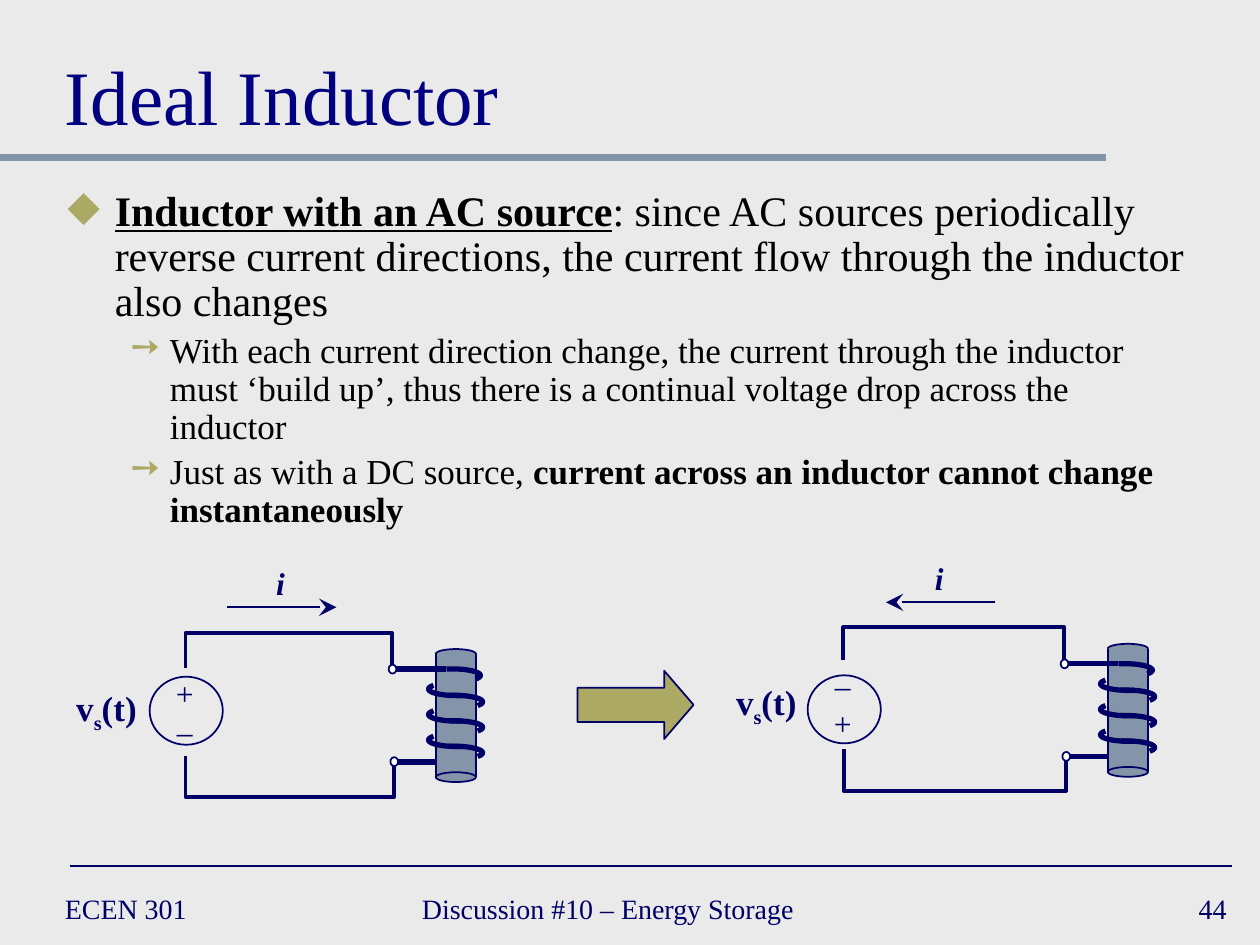
"""Build the Ideal Inductor slide with two AC circuits."""
from math import cos, radians, sin

from lxml import etree
from pptx import Presentation
from pptx.dml.color import RGBColor
from pptx.enum.shapes import MSO_CONNECTOR, MSO_SHAPE
from pptx.enum.text import MSO_ANCHOR, MSO_AUTO_SIZE, PP_ALIGN
from pptx.oxml.ns import qn
from pptx.util import Pt

STRAIGHT, ELBOW = MSO_CONNECTOR.STRAIGHT, MSO_CONNECTOR.ELBOW
OVAL, RECT, ARROW = MSO_SHAPE.OVAL, MSO_SHAPE.RECTANGLE, MSO_SHAPE.RIGHT_ARROW
TOP, MIDDLE, BOTTOM = MSO_ANCHOR.TOP, MSO_ANCHOR.MIDDLE, MSO_ANCHOR.BOTTOM
LEFT, CENTER, RIGHT = PP_ALIGN.LEFT, PP_ALIGN.CENTER, PP_ALIGN.RIGHT
FIT = MSO_AUTO_SIZE.SHAPE_TO_FIT_TEXT
FONT = "Times New Roman"
HEX = {"back": "EAEAEA", "ink": "000066", "title": "000080", "text": "000000",
       "gold": "ACA964", "steel": "8495A9", "white": "FFFFFF"}
RGB = {name: RGBColor.from_string(code) for name, code in HEX.items()}


def write(box, paras, size, color="ink", align=LEFT, anchor=TOP, wrap=True):
    """Add a text box; each paragraph is a list of (text, style letters)."""
    frame = slide.shapes.add_textbox(*map(Pt, box)).text_frame
    frame.word_wrap, frame.vertical_anchor = wrap, anchor
    if not wrap:
        frame.auto_size = FIT
    for n, runs in enumerate(paras):
        para = frame.add_paragraph() if n else frame.paragraphs[0]
        para.alignment = align
        for words, style in runs:
            run = para.add_run()
            run.text = words
            font = run.font
            font.name, font.size, font.color.rgb = FONT, Pt(size), RGB[color]
            font.bold, font.italic = "b" in style, "i" in style
            font.underline = "u" in style
            if "s" in style:
                run._r.get_or_add_rPr().set("baseline", "-25000")
    return frame


def draw(shapes, ends, width, color="ink", kind=STRAIGHT):
    """Add a connector without a shadow."""
    link = shapes.add_connector(kind, *map(Pt, ends))
    link.line.width, link.line.color.rgb = Pt(width), RGB[color]
    etree.SubElement(link._element.spPr, qn("a:effectLst"))
    return link


deck = Presentation()
deck.slide_width, deck.slide_height = Pt(720), Pt(540)
slide = deck.slides.add_slide(deck.slide_layouts[6])
slide.background.fill.solid()
slide.background.fill.fore_color.rgb = RGB["back"]

draw(slide.shapes, (0, 90, 632, 90), 4, "steel")
draw(slide.shapes, (40, 495, 704, 495), 1)
for left, wide, words, align in [
        (30, 156, "ECEN 301", LEFT),
        (234, 276, "Discussion #10 – Energy Storage", LEFT),
        (558, 150, "44", RIGHT)]:
    write((left, 504, wide, 30), [[(words, "")]], 16, align=align, anchor=MIDDLE)
write((30, 12, 660, 72), [[("Ideal Inductor", "")]], 44, "title", anchor=BOTTOM)

body = write((31.5, 105, 658, 199.5), [
    [("Inductor with an AC source", "bu"),
     (": since AC sources periodically reverse current directions, the current "
      "flow through the inductor also changes", "")],
    [("With each current direction change, the current through the inductor must "
      "‘build up’, thus there is a continual voltage drop across the inductor", "")],
    [("Just as with a DC source, ", ""),
     ("current across an inductor cannot change instantaneously", "b")],
], 20, "text")
for n, para in enumerate(body.paragraphs):
    para.line_spacing = 0.9
    para.space_before = Pt(4.25 if n else 0)
    para.level = 1 if n else 0
    props = para._p.get_or_add_pPr()
    margin, hang = (58.5, 22.5) if n else (27, 27)
    props.set("marL", str(Pt(margin)))
    props.set("indent", str(-Pt(hang)))
    tint = etree.SubElement(props, qn("a:buClr"))
    etree.SubElement(tint, qn("a:srgbClr")).set("val", HEX["gold"])
    etree.SubElement(props, qn("a:buChar")).set("char", "➙" if n else "◆")
for run in body.paragraphs[0].runs:
    run.font.size = Pt(24)

circuits = [
    {"name": (36, 388.8), "ring": (85.5, 386.7), "signs": (93.4, 381.6, "+–"),
     "wires": [(106, 381.6, 224, 380.2, 361.6), (106, 432, 225.4, 437.8, 455.3)],
     "flow": (129.7, 347, 192.2, 347), "amps": (150.6, 319), "coil": (249, 373.7)},
    {"name": (413, 385.2), "ring": (461.5, 385.9), "signs": (469.4, 377.3, "–+"),
     "wires": [(482, 377.3, 608.2, 376.4, 358.6), (482, 428.2, 609.2, 434.3, 452)],
     "flow": (568.8, 344.2, 506.3, 344.2), "amps": (527, 316), "coil": (633, 370.7)},
]
for part in circuits:
    write((*part["name"], 49.7, 31), [[("v", "b"), ("s", "bs"), ("(t)", "b")]],
          20, align=CENTER, wrap=False)
    ring = slide.shapes.add_shape(OVAL, *map(Pt, (*part["ring"], 41.8, 38.9)))
    ring.shadow.inherit = False
    ring.fill.background()
    ring.line.width, ring.line.color.rgb = Pt(1), RGB["ink"]
    left, top, signs = part["signs"]
    write((left, top, 24.5, 50.4), [[(sign, "")] for sign in signs],
          18, align=CENTER, wrap=False)

    for x1, y1, x2, y2, bend in part["wires"]:
        span, wide = abs(y2 - y1), x2 - x1
        left, top = (x1 + x2 - span) / 2, (y1 + y2 - wide) / 2
        wire = draw(slide.shapes, (left, top, left + span, top + wide), 2.25, kind=ELBOW)
        frame = wire._element.spPr.find(qn("a:xfrm"))
        frame.set("rot", "16200000")
        if y2 > y1:
            frame.set("flipH", "1")
        guides = wire._element.spPr.find(qn("a:prstGeom")).find(qn("a:avLst"))
        guide = etree.SubElement(guides, qn("a:gd"))
        guide.set("name", "adj1")
        guide.set("fmla", f"val {round(abs(bend - y1) / span * 100000)}")

    flow = draw(slide.shapes, part["flow"], 1)
    tip = etree.SubElement(flow.line._get_or_add_ln(), qn("a:tailEnd"))
    for key, val in (("type", "stealth"), ("w", "lg"), ("len", "lg")):
        tip.set(key, val)
    write((*part["amps"], 19.4, 28.8), [[("i", "bi")]], 18, align=CENTER, wrap=False)

    x, y = part["coil"]
    coil = slide.shapes.add_group_shape().shapes
    core = coil.add_shape(RECT, Pt(x), Pt(y), Pt(23), Pt(70))
    core.shadow.inherit = False
    core.fill.solid()
    core.fill.fore_color.rgb = RGB["steel"]
    core.line.fill.background()

    arcs = [(x + 9, y + 12.3, 16.5, 3.75, -100, 34, 3)]
    for n in range(3):
        drop = 14.55 * n
        arcs += [(x + 12.4, y + 20.1 + drop, 16.5, 3.75, 80, 214, 3),
                 (x + 10.3, y + 27.4 + drop, 16.5, 3.75, -100, 34, 3)]
    arcs.append((x + 11.5, y, 11.5, 2.8, 180, 360, 1))
    paths = []
    for mid, level, wide, high, start, stop, weight in arcs:
        turns = [radians(start + (stop - start) * n / 24) for n in range(25)]
        dots = [(Pt(mid + wide * cos(t)), Pt(level + high * sin(t))) for t in turns]
        paths.append((dots, weight))

    draw(coil, (x + 5.8, y + 8.6, x - 23, y + 8.6), 3)
    draw(coil, (x, y + 61.7, x - 23, y + 61.7), 3)
    for left, top, wide, high, color, edge in [
            (x - 26.9, y + 6.1, 4.4, 5.1, "white", True),
            (x - 25.9, y + 59, 4.4, 5.1, "white", True),
            (x, y + 67.6, 23, 5.6, "steel", True),
            (x, y - 2.8, 23, 5.6, "steel", False)]:
        oval = coil.add_shape(OVAL, *map(Pt, (left, top, wide, high)))
        oval.shadow.inherit = False
        oval.fill.solid()
        oval.fill.fore_color.rgb = RGB[color]
        if edge:
            oval.line.width, oval.line.color.rgb = Pt(1), RGB["ink"]
        else:
            oval.line.fill.background()
    for dots, weight in paths:
        path = coil.build_freeform(*dots[0])
        path.add_line_segments(dots[1:], close=False)
        turn = path.convert_to_shape()
        turn.shadow.inherit = False
        turn.fill.background()
        turn.line.width, turn.line.color.rgb = Pt(weight), RGB["ink"]
    for side in (x, x + 23):
        draw(coil, (side, y, side, y + 70.5), 1)

arrow = slide.shapes.add_shape(ARROW, Pt(330), Pt(383.3), Pt(66.3), Pt(39))
arrow.adjustments[0], arrow.adjustments[1] = 0.5, 0.43
arrow.shadow.inherit = False
arrow.fill.solid()
arrow.fill.fore_color.rgb = RGB["gold"]
arrow.line.width, arrow.line.color.rgb = Pt(1), RGB["ink"]

deck.save("out.pptx")
